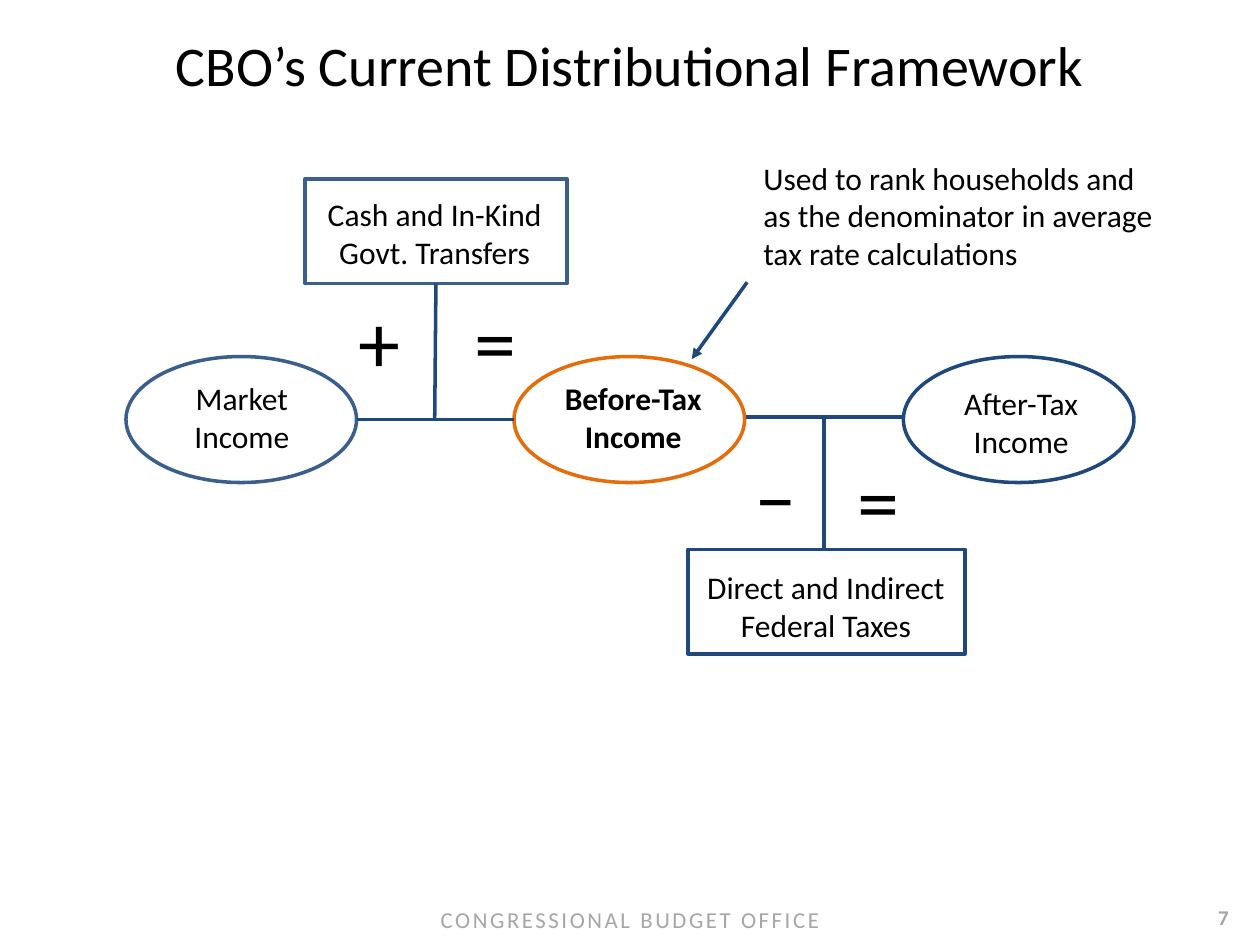
from lxml import etree
from pptx import Presentation
from pptx.dml.color import RGBColor
from pptx.enum import shapes, text
from pptx.oxml.ns import qn
from pptx.util import Inches, Pt

INK = {"black": "000000", "gray": "A6A6A6", "steel": "3A5F8C",
       "navy": "1F497D", "orange": "E46C0A"}
OVAL, RECT = shapes.MSO_SHAPE.OVAL, shapes.MSO_SHAPE.RECTANGLE
LEFT, MID = text.PP_ALIGN.LEFT, text.PP_ALIGN.CENTER

# Kind, left, top, width, height, colour
NODES = {
    "market": (OVAL, 1, 2.83, 1.83, 1, "steel"),
    "before": (OVAL, 4.08, 2.83, 1.83, 1, "orange"),
    "after": (OVAL, 7.17, 2.83, 1.83, 1, "navy"),
    "transfers": (RECT, 2.42, 1.42, 2.08, 0.83, "steel"),
    "taxes": (RECT, 5.46, 4.36, 2.2, 0.83, "navy"),
}

# Lines, left, top, width, height, bold
LABELS = [
    (["Market", "Income"], 1.42, 2.96, 1, 0.71, False),
    (["Before-Tax", "Income"], 4.37, 2.96, 1.31, 0.71, True),
    (["After-Tax", "Income"], 7.54, 3, 1.13, 0.71, False),
    (["Cash and In-Kind", "Govt. Transfers"], 2.49, 1.5, 1.92, 0.71, False),
    (["Direct and Indirect", "Federal Taxes"], 5.5, 4.46, 2.11, 0.71, False),
]
SIGNS = [("+", 2.75, 2.25), ("=", 3.67, 2.25),
         ("‒", 5.89, 3.46), ("=", 6.71, 3.51)]
NOTE = ["Used to rank households and", "as the denominator in average",
        "tax rate calculations"]

# From x, y to x, y
LINKS = {
    "market to before": (2.83, 3.33, 4.08, 3.33),
    "before to after": (5.92, 3.31, 7.17, 3.31),
    "taxes stem": (6.54, 4.36, 6.54, 3.3),
    "transfers stem": (3.46, 2.25, 3.45, 3.33),
    "note arrow": (5.93, 2.24, 5.49, 2.85),
}


def rgb(name):
    return RGBColor.from_string(INK[name])


def write(slide, lines, box, size, color="black", bold=False, align=MID, wrap=False):
    shape = slide.shapes.add_textbox(*map(Inches, box))
    frame = shape.text_frame
    frame.word_wrap = wrap
    frame.text = "\n".join(lines)
    for para in frame.paragraphs:
        para.alignment = align
        font = para.font
        font.name, font.size, font.bold = "Calibri", Pt(size), bold
        font.color.rgb = rgb(color)
    return frame


def node(slide, kind, x, y, w, h, color):
    shape = slide.shapes.add_shape(kind, *map(Inches, (x, y, w, h)))
    shape.shadow.inherit = False
    shape.fill.background()
    shape.line.color.rgb = rgb(color)
    shape.line.width = Pt(2)
    return shape


def link(slide, ends):
    line = slide.shapes.add_connector(
        shapes.MSO_CONNECTOR.STRAIGHT, *map(Inches, ends))
    line.line.color.rgb = rgb("navy")
    line.line.width = Pt(2)
    etree.SubElement(line._element.spPr, qn("a:effectLst"))
    return line


def main():
    deck = Presentation()
    deck.slide_width, deck.slide_height = Inches(10), Inches(7.5)
    slide = deck.slides.add_slide(deck.slide_layouts[6])

    write(slide, ["CBO’s Current Distributional Framework"],
          (0, 0.19, 10, 0.64), 32, wrap=True)

    nodes = {name: node(slide, *row) for name, row in NODES.items()}
    links = {name: link(slide, ends) for name, ends in LINKS.items()}
    links["transfers stem"].begin_connect(nodes["transfers"], 2)
    edge = links["note arrow"].line._get_or_add_ln()
    etree.SubElement(edge, qn("a:tailEnd"), type="triangle")

    for lines, *box, bold in LABELS:
        write(slide, lines, box, 18, bold=bold)
    for sign, x, y in SIGNS:
        write(slide, [sign], (x, y, 0.54, 0.91), 48, align=LEFT)
    write(slide, NOTE, (5.96, 1.21, 3.39, 1.01), 18, align=LEFT)

    foot = write(slide, ["CONGRESSIONAL BUDGET OFFICE"],
                 (0, 7.08, 10, 0.38), 13, "gray", wrap=True)
    foot.margin_top = Inches(0.1)
    foot.vertical_anchor = text.MSO_ANCHOR.MIDDLE
    foot.paragraphs[0].runs[0].font._element.set("spc", "150")
    write(slide, ["7"], (9.42, 7.13, 0.58, 0.31), 12, "gray", bold=True, wrap=True)

    deck.save("out.pptx")


if __name__ == "__main__":
    main()
